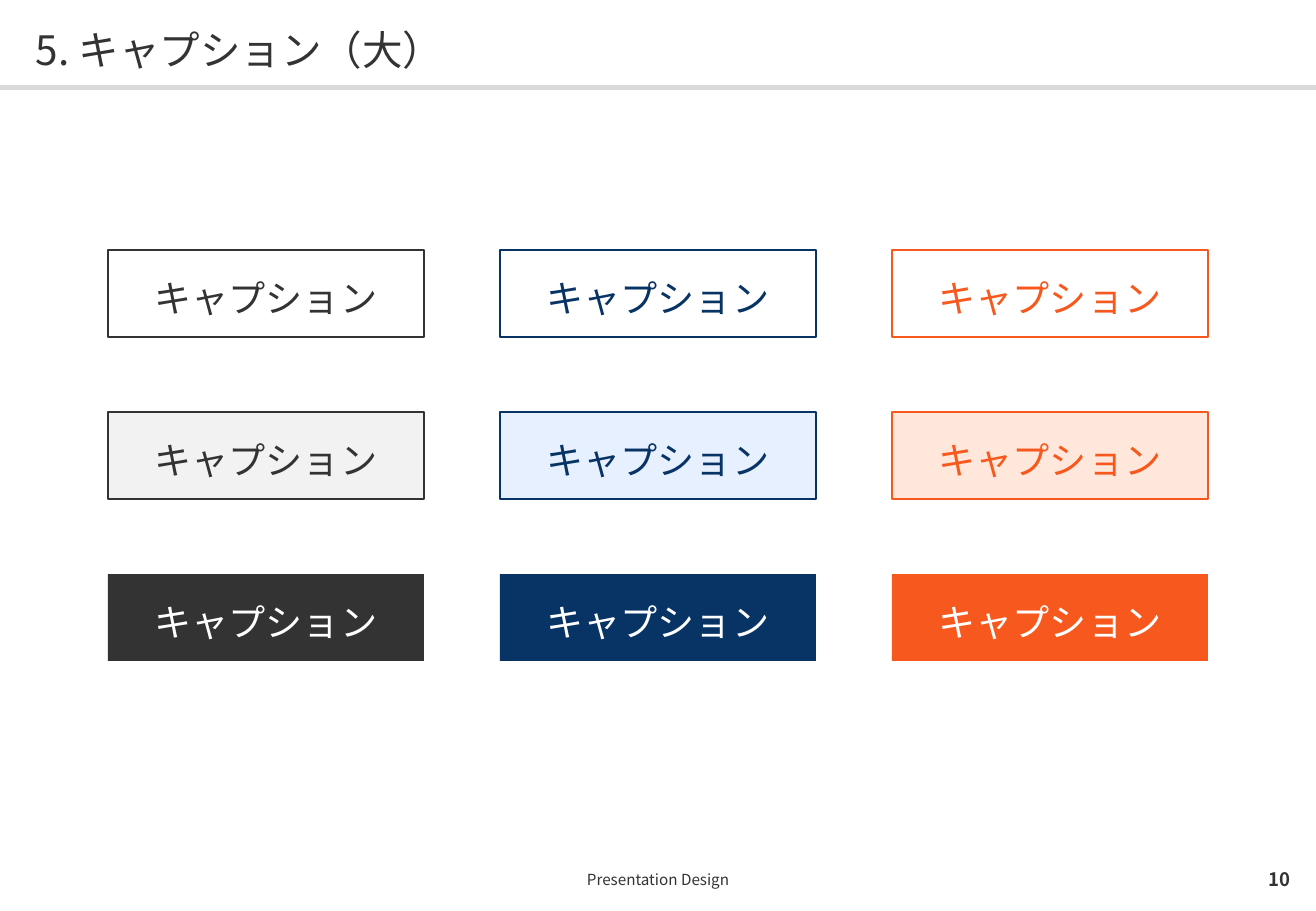
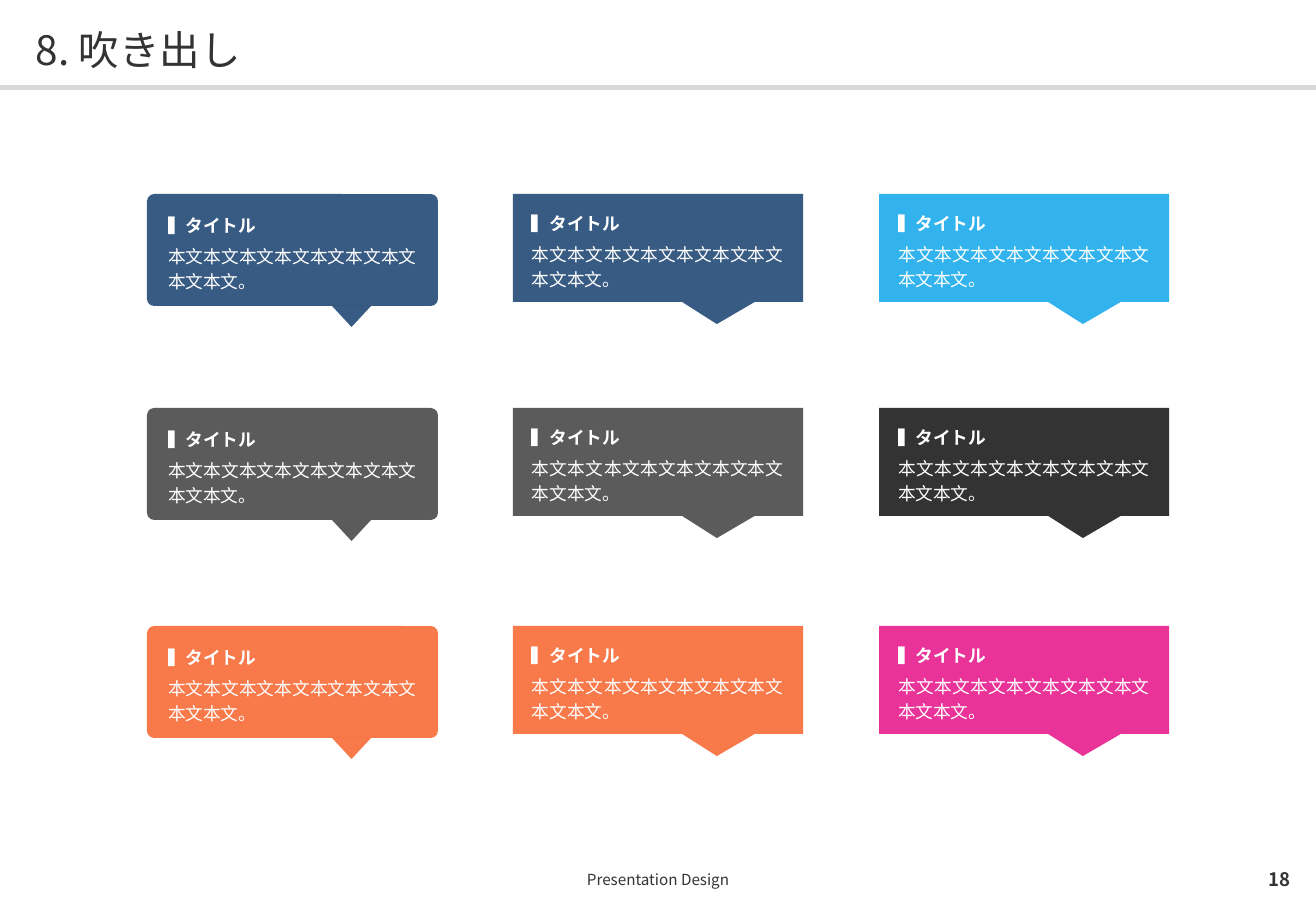
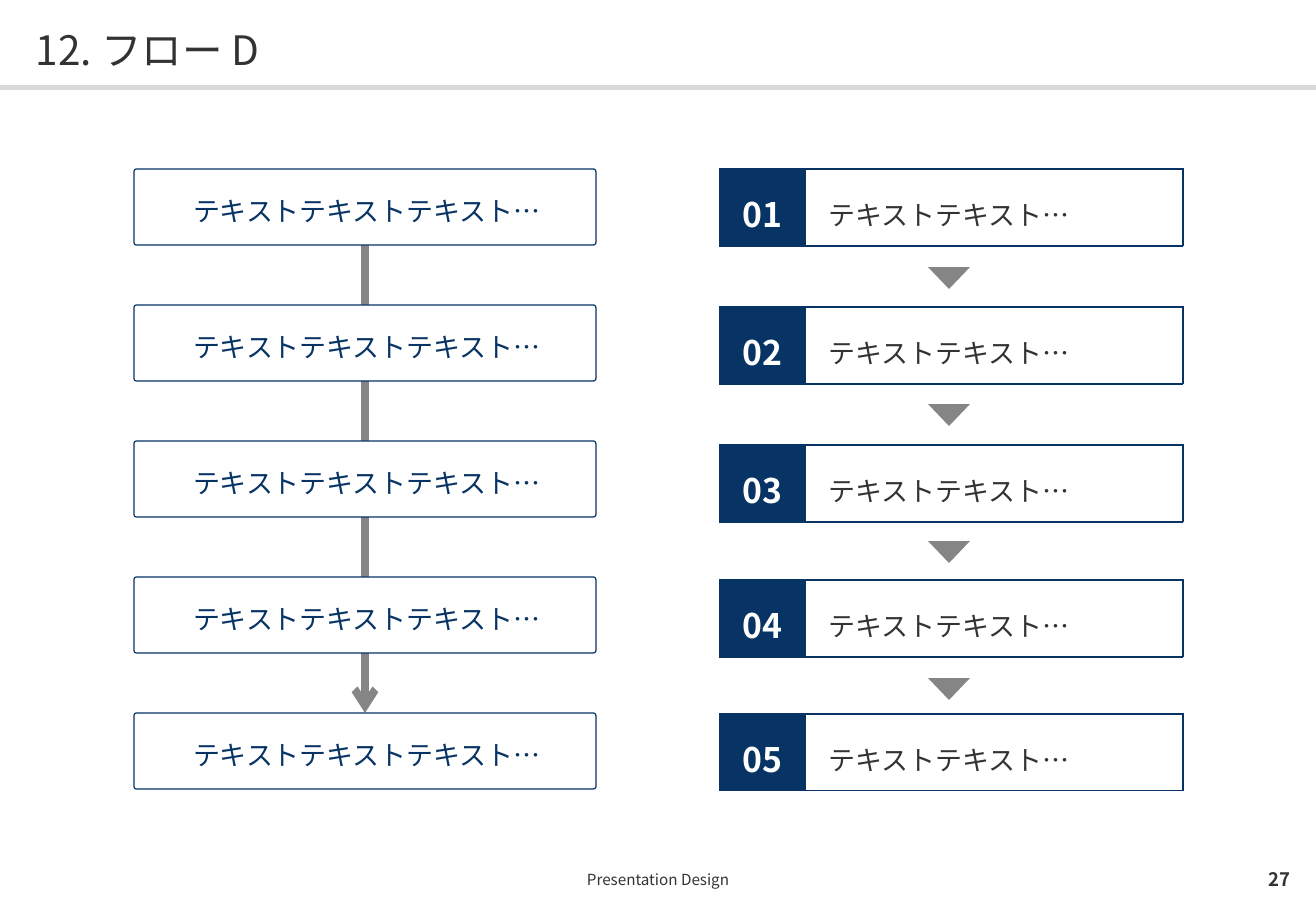
import lxml.etree
import pptx
import pptx.dml.color
import pptx.enum.shapes
import pptx.enum.text
import pptx.oxml.ns
import pptx.util

# Shared style: lengths are px, 121.5 to the inch
EMU_PER_PX = 914400 / 121.5
SLIDE_WIDTH, SLIDE_HEIGHT = 1316, 911
FONT = "Noto Sans CJK JP"
DARK, NAVY, ORANGE, WHITE = "333333", "073365", "F7581D", "FFFFFF"
RULE_GREY, ARROW_GREY = "D9D9D9", "858585"
NO_INSETS = (0, 0, 0, 0)

SHAPE = pptx.enum.shapes.MSO_SHAPE
ALIGN = pptx.enum.text.PP_ALIGN
MIDDLE = pptx.enum.text.MSO_ANCHOR.MIDDLE


def px(length):
    return pptx.util.Emu(round(length * EMU_PER_PX))


def color(value):
    return pptx.dml.color.RGBColor.from_string(value)


def add_xml(parent, tag, **attributes):
    return lxml.etree.SubElement(parent, pptx.oxml.ns.qn(tag), attributes)


# Text
def add_paragraph(frame, text, size, text_color, align=ALIGN.LEFT, bold=False,
                  spacing=1.1, after=0, first=True):
    paragraph = frame.paragraphs[0] if first else frame.add_paragraph()
    paragraph.alignment = align
    paragraph.line_spacing = spacing
    paragraph.space_after = pptx.util.Pt(after)
    run = paragraph.add_run()
    run.text = text
    run.font.size = pptx.util.Pt(size)
    run.font.bold = bold
    run.font.color.rgb = color(text_color)
    run.font.name = FONT
    add_xml(run.font._element, "a:ea", typeface=FONT)


def set_insets(target, insets):
    """Set left, top, right and bottom margins of a text frame or a cell."""
    for side, inset in zip(("left", "top", "right", "bottom"), insets):
        setattr(target, "margin_" + side, px(inset))
    target.vertical_anchor = MIDDLE


def prepare_frame(shape, insets):
    frame = shape.text_frame
    frame.word_wrap = True
    set_insets(frame, insets)
    return frame


def add_label(slide, box, text, size, **style):
    shape = slide.shapes.add_textbox(*map(px, box))
    add_paragraph(prepare_frame(shape, NO_INSETS), text, size, DARK, **style)


# Shapes
def add_shape(slide, kind, box, fill=None, line=None, alpha=None, adjustments=()):
    shape = slide.shapes.add_shape(kind, *map(px, box))
    shape.shadow.inherit = False
    for index, value in enumerate(adjustments):
        shape.adjustments[index] = value
    if fill:
        shape.fill.solid()
        shape.fill.fore_color.rgb = color(fill)
        if alpha:
            srgb = shape._element.spPr.find(".//" + pptx.oxml.ns.qn("a:srgbClr"))
            add_xml(srgb, "a:alpha", val=str(alpha * 1000))
    else:
        shape.fill.background()
    if line:
        shape.line.color.rgb = color(line)
        shape.line.width = pptx.util.Pt(0.75)
    else:
        shape.line.fill.background()
    return shape


def add_down_triangle(slide, box, fill, alpha=None):
    add_shape(slide, SHAPE.ISOSCELES_TRIANGLE, box, fill, alpha=alpha).rotation = 180


def add_caption(slide, box, fill, line, text_color):
    shape = add_shape(slide, SHAPE.RECTANGLE, box, fill, line)
    frame = prepare_frame(shape, (24, 19, 24, 15))
    add_paragraph(frame, "キャプション", 22, text_color, ALIGN.CENTER)


def add_callout(slide, left, top, fill, rounded):
    if rounded:
        height = 112
        shape = add_shape(slide, SHAPE.ROUNDED_RECTANGLE, (left, top, 291, height),
                          fill, alpha=80, adjustments=[0.064])
        add_down_triangle(slide, (left + 185, top + height, 39, 21), fill, 80)
    else:
        shape = add_shape(slide, SHAPE.RECTANGULAR_CALLOUT, (left, top, 290, 108),
                          fill, alpha=80, adjustments=[0.203, 0.705])
    frame = prepare_frame(shape, (19, 15, 19, 12))
    style = dict(align=ALIGN.JUSTIFY, spacing=1.2, after=3)
    add_paragraph(frame, "▍タイトル", 10.5, WHITE, bold=True, **style)
    add_paragraph(frame, "本文本文本文本文本文本文本文本文本文。", 10.5, WHITE,
                  first=False, **style)


def add_step_box(slide, top):
    shape = add_shape(slide, SHAPE.ROUNDED_RECTANGLE, (134, top, 462, 76),
                      WHITE, NAVY, adjustments=[0.035])
    frame = prepare_frame(shape, (19, 22, 15, 17))
    add_paragraph(frame, "テキストテキストテキスト…", 16, NAVY, ALIGN.CENTER)
    return shape


def add_arrow(slide):
    arrow = slide.shapes.add_connector(
        pptx.enum.shapes.MSO_CONNECTOR.STRAIGHT, 0, 0, 0, 0)
    arrow.line.color.rgb = color(ARROW_GREY)
    arrow.line.width = pptx.util.Pt(4.5)
    add_xml(arrow.line._get_or_add_ln(), "a:tailEnd", type="arrow")
    add_xml(arrow._element.spPr, "a:effectLst")
    return arrow


# Numbered step: a table with one row
def set_cell(cell, fill, insets, inner_side):
    properties = cell._tc.get_or_add_tcPr()
    for side in "LRTB":
        width = pptx.util.Pt(0.5 if side == inner_side else 0.75)
        border = add_xml(properties, "a:ln" + side, w=str(width))
        add_xml(add_xml(border, "a:solidFill"), "a:srgbClr", val=NAVY)
    cell.fill.solid()
    cell.fill.fore_color.rgb = color(fill)
    set_insets(cell, insets)


def add_numbered_step(slide, top, number):
    widths = (85, 378)
    table = slide.shapes.add_table(
        1, 2, px(720), px(top), px(sum(widths)), px(77)).table
    table.first_row = table.horz_banding = False
    for column, width in zip(table.columns, widths):
        column.width = px(width)
    number_cell, text_cell = table.cell(0, 0), table.cell(0, 1)
    set_cell(number_cell, NAVY, (0, 10, 0, 5), "R")
    add_paragraph(number_cell.text_frame, f"{number:02d}", 20, WHITE,
                  ALIGN.CENTER, bold=True)
    set_cell(text_cell, WHITE, (24, 10, 0, 5), "L")
    add_paragraph(text_cell.text_frame, "テキストテキスト…", 16, DARK,
                  ALIGN.JUSTIFY, spacing=1.2)


# Slides
def add_slide(presentation, title, page):
    slide = presentation.slides.add_slide(presentation.slide_layouts[6])
    add_shape(slide, SHAPE.RECTANGLE, (0, 85, SLIDE_WIDTH, 5), RULE_GREY)
    add_label(slide, (36, 21, 1244, 52), title, 24)
    add_label(slide, (108, 862, 1100, 35), "Presentation Design", 9,
              align=ALIGN.CENTER, spacing=1)
    add_label(slide, (1227, 862, 63, 35), str(page), 11,
              align=ALIGN.RIGHT, bold=True, spacing=1)
    return slide


def build_captions(presentation):
    slide = add_slide(presentation, "5. キャプション（大）", 10)
    themes = [(DARK, "F2F2F2"), (NAVY, "E7F0FF"), (ORANGE, "FFE8DB")]
    for column, (strong, pale) in enumerate(themes):
        rows = [(None, strong, strong), (pale, strong, strong), (strong, None, WHITE)]
        for row, (fill, line, text_color) in enumerate(rows):
            box = (108 + 392 * column, 250 + 162 * row, 316, 87)
            add_caption(slide, box, fill, line, text_color)


def build_callouts(presentation):
    slide = add_slide(presentation, "8. 吹き出し", 18)
    rows = [(194, NAVY, "00A0E9"), (408, DARK, "000000"), (626, ORANGE, "E4007F")]
    for top, base, accent in rows:
        for column, fill in enumerate((base, base, accent)):
            add_callout(slide, 147 + 366 * column, top, fill, rounded=column == 0)


def build_flow(presentation):
    slide = add_slide(presentation, "12. フロー D", 27)
    # The arrow comes first so that it runs behind the boxes
    arrow = add_arrow(slide)
    boxes = [add_step_box(slide, 169 + 136 * index) for index in range(5)]
    arrow.begin_connect(boxes[0], 2)
    arrow.end_connect(boxes[-1], 0)
    # Numbered steps with triangles between them
    for number, top in enumerate((169, 307, 445, 580, 714), start=1):
        add_numbered_step(slide, top, number)
    for index in range(4):
        add_down_triangle(slide, (928, 267 + 137 * index, 42, 22), ARROW_GREY)


def main():
    presentation = pptx.Presentation()
    presentation.slide_width = px(SLIDE_WIDTH)
    presentation.slide_height = px(SLIDE_HEIGHT)
    build_captions(presentation)
    build_callouts(presentation)
    build_flow(presentation)
    presentation.save("out.pptx")


if __name__ == "__main__":
    main()
